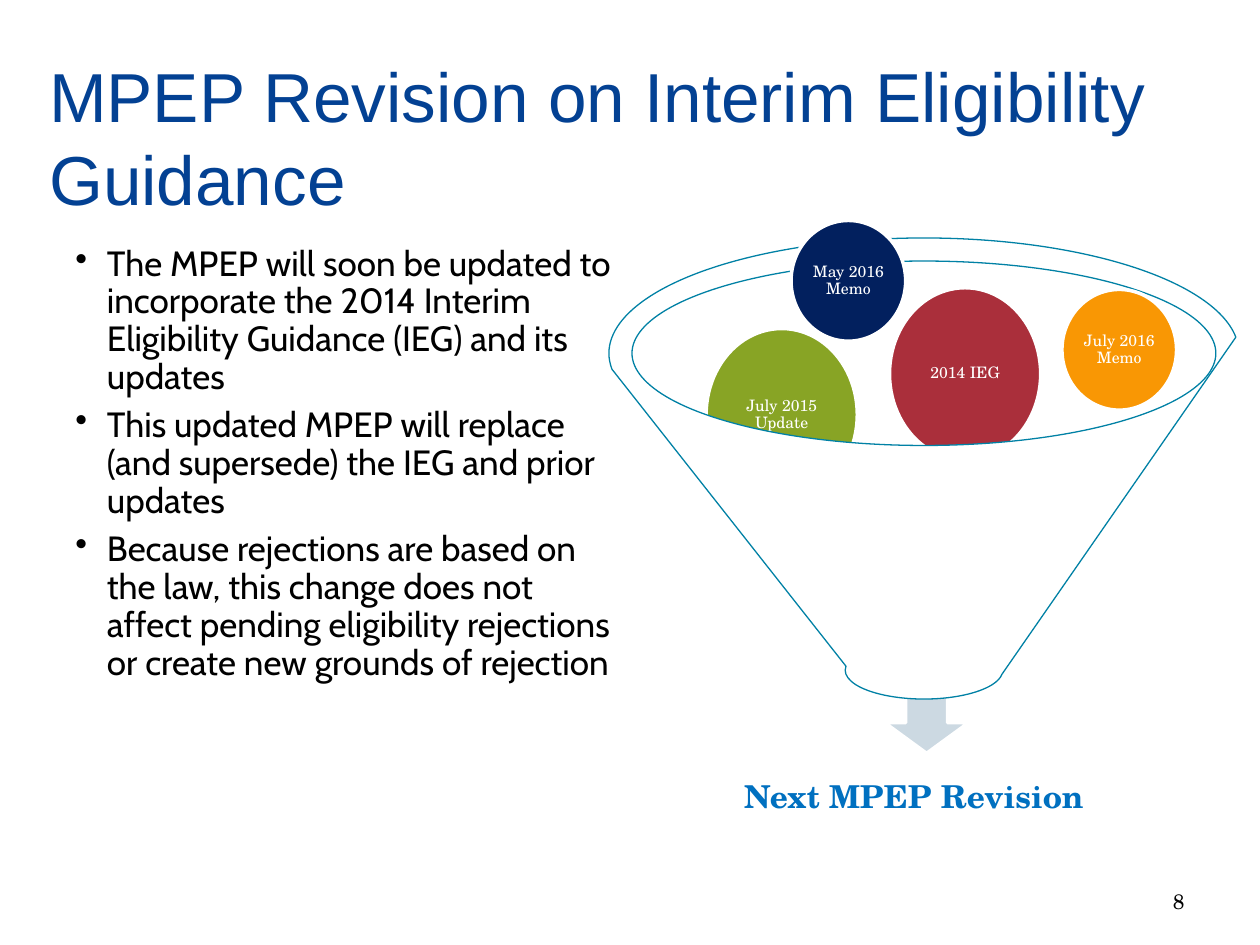
from lxml import etree
from pptx import Presentation
from pptx.dml.color import RGBColor
from pptx.enum import shapes, text
from pptx.oxml import ns
from pptx.util import Pt

COLORS = {
    "title": "034193", "body": "000000", "white": "FFFFFF",
    "navy": "02205E", "green": "88A425", "red": "AA2F3B", "amber": "F99704",
    "funnel": "0081A5", "arrow": "CCD9E2", "result": "0070C0",
}
SERIF = "TeX Gyre Schola"
SMALL, LARGE = (65.5, 69), (86.4, 98.5)
POINTS = [
    "The MPEP will soon be updated to incorporate the 2014 Interim Eligibility Guidance (IEG) and its updates",
    "This updated MPEP will replace (and supersede) the IEG and prior updates",
    "Because rejections are based on the law, this change does not affect pending eligibility rejections "
    "or create new grounds of rejection",
]


class Deck:
    def __init__(self, width, height):
        self.prs = Presentation()
        self.prs.slide_width, self.prs.slide_height = Pt(width), Pt(height)
        self.slide = self.prs.slides.add_slide(self.prs.slide_layouts[6])

    def color(self, name):
        return RGBColor.from_string(COLORS[name])

    def set_text(self, frame, lines, size, font, color, align, anchor, spacing=1.0, after=0, bold=False):
        frame.word_wrap = True
        frame.vertical_anchor = anchor
        for i, line in enumerate(lines):
            paragraph = frame.paragraphs[0] if i == 0 else frame.add_paragraph()
            paragraph.text = line
            paragraph.alignment = align
            paragraph.line_spacing = spacing
            paragraph.space_after = Pt(after)
            paragraph.font.size = Pt(size)
            paragraph.font.name = font
            paragraph.font.bold = bold
            paragraph.font.color.rgb = self.color(color)

    def label(self, box, lines, size, font, color, align=text.PP_ALIGN.LEFT,
              anchor=text.MSO_ANCHOR.MIDDLE, **style):
        frame = self.slide.shapes.add_textbox(*map(Pt, box)).text_frame
        self.set_text(frame, lines, size, font, color, align, anchor, **style)
        return frame

    def bullets(self, box, lines, size, font, color):
        frame = self.label(box, lines, size, font, color,
                           anchor=text.MSO_ANCHOR.TOP, spacing=0.9, after=6)
        for paragraph in frame.paragraphs:
            props = paragraph._p.get_or_add_pPr()
            props.set("marL", str(Pt(18)))
            props.set("indent", str(-Pt(18)))
            bullet = etree.Element(ns.qn("a:buChar"), char="•")
            props.find(ns.qn("a:defRPr")).addprevious(bullet)

    def shape(self, kind, box, fill, line, weight):
        shape = self.slide.shapes.add_shape(kind, *map(Pt, box))
        shape.shadow.inherit = False
        shape.fill.solid()
        shape.fill.fore_color.rgb = self.color(fill)
        shape.line.color.rgb = self.color(line)
        shape.line.width = Pt(weight)
        return shape

    def ball(self, left, top, size, fill, caption):
        ball = self.shape(shapes.MSO_SHAPE.OVAL, (left, top, *size), fill, "white", 2)
        frame = ball.text_frame
        frame.margin_left = frame.margin_right = frame.margin_top = frame.margin_bottom = 0
        self.set_text(frame, [caption], 9, SERIF, "white", text.PP_ALIGN.CENTER,
                      text.MSO_ANCHOR.MIDDLE, spacing=0.9)


def main():
    deck = Deck(720, 540)
    deck.label((21, 36, 699, 83.5), ["MPEP Revision on Interim Eligibility Guidance"],
               39.6, "Arial", "title")
    deck.bullets((36, 137, 325.5, 316), POINTS, 20, "Cabin", "body")
    deck.label((516, 500.5, 168, 28.8), ["8"], 12, SERIF, "body", align=text.PP_ALIGN.RIGHT)

    deck.shape(shapes.MSO_SHAPE.DOWN_ARROW, (505.5, 395.5, 48, 35), "arrow", "white", 2)
    deck.label((407, 423.5, 230.5, 65.5), ["Next MPEP Revision"], 18, SERIF, "result",
               align=text.PP_ALIGN.CENTER, spacing=0.9, bold=True)
    deck.ball(403.5, 187.7, LARGE, "green", "July 2015 Update")
    deck.ball(508.3, 164.4, LARGE, "red", "2014 IEG")
    deck.shape(shapes.MSO_SHAPE.FUNNEL, (348, 136, 360, 263.5), "white", "funnel", 0.75)
    deck.ball(606.8, 165.4, SMALL, "amber", "July 2016 Memo")
    deck.ball(452, 126, SMALL, "navy", "May 2016 Memo")
    deck.prs.save("out.pptx")


if __name__ == "__main__":
    main()
